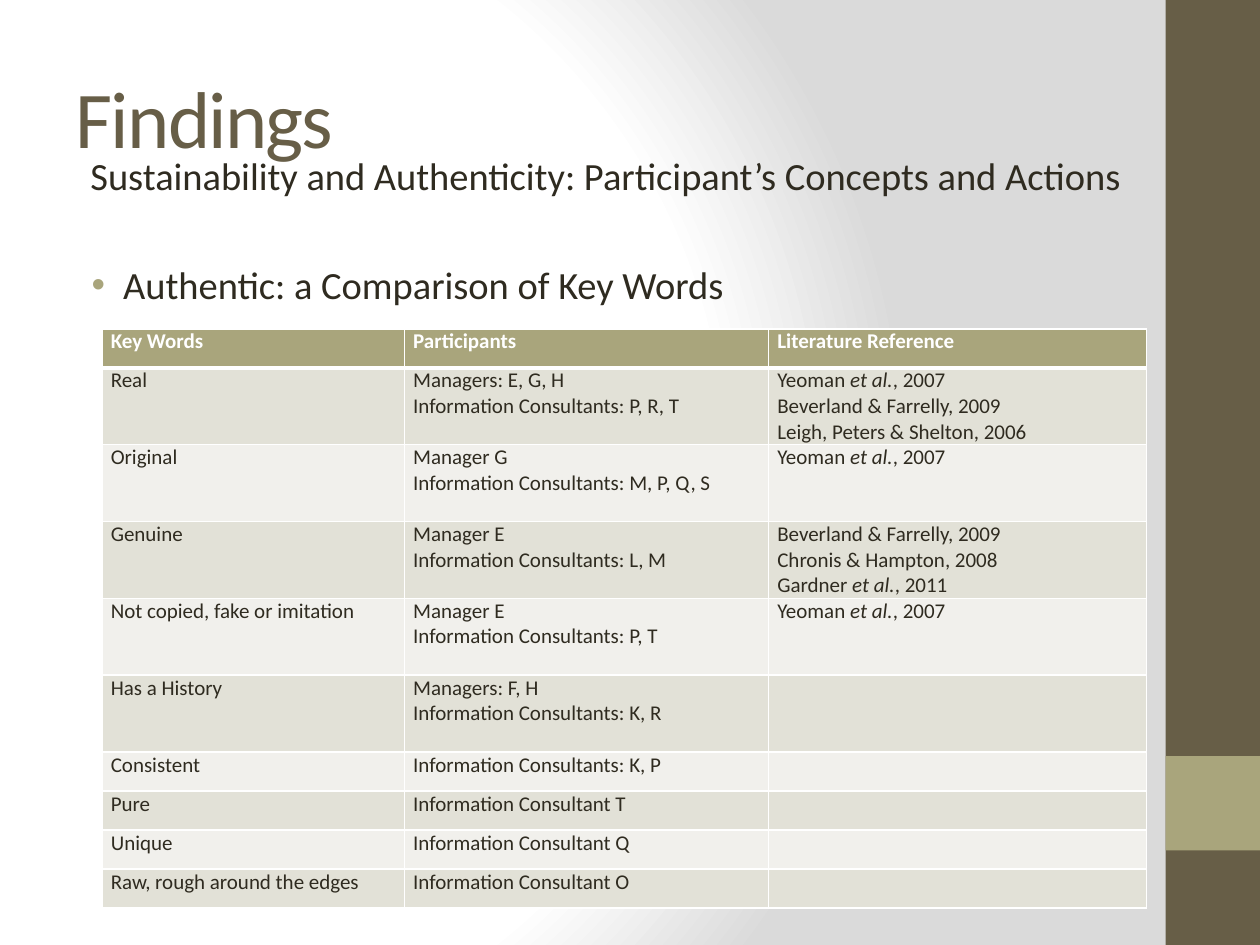
"""Build the Findings slide comparing key words for authenticity."""
from dataclasses import dataclass

import pptx
import pptx.dml.color
import pptx.enum.shapes
import pptx.enum.text
import pptx.oxml
import pptx.oxml.ns
import pptx.util

Inches = pptx.util.Inches
Pt = pptx.util.Pt
FONT = "Calibri"
COLORS = {
    "white": "FFFFFF",
    "gray": "DADADA",
    "brown": "675E47",
    "olive": "A9A57C",
    "ink": "2F2B20",
    "band_dark": "E2E1D7",
    "band_light": "F1F0EC",
}
NS = pptx.oxml.ns.nsdecls("a")


@dataclass
class Bar:
    top: float
    height: float
    color: str


@dataclass
class KeyWord:
    name: str
    participants: tuple[str, ...]
    references: tuple[str, ...] = ()


BARS = [Bar(0, 7.5, "brown"), Bar(6, 0.75, "olive")]
HEADERS = ("Key Words", "Participants", "Literature Reference")
COL_WIDTHS = (2.4, 2.89, 3)
ROW_SHORT, ROW_TALL = 0.31, 0.61
KEY_WORDS = [
    KeyWord("Real", ("Managers: E, G, H", "Information Consultants: P, R, T"),
            ("Yeoman et al., 2007", "Beverland & Farrelly, 2009", "Leigh, Peters & Shelton, 2006")),
    KeyWord("Original", ("Manager G", "Information Consultants: M, P, Q, S"), ("Yeoman et al., 2007",)),
    KeyWord("Genuine", ("Manager E", "Information Consultants: L, M"),
            ("Beverland & Farrelly, 2009", "Chronis & Hampton, 2008", "Gardner et al., 2011")),
    KeyWord("Not copied, fake or imitation", ("Manager E", "Information Consultants: P, T"),
            ("Yeoman et al., 2007",)),
    KeyWord("Has a History", ("Managers: F, H", "Information Consultants: K, R")),
    KeyWord("Consistent", ("Information Consultants: K, P",)),
    KeyWord("Pure", ("Information Consultant T",)),
    KeyWord("Unique", ("Information Consultant Q",)),
    KeyWord("Raw, rough around the edges", ("Information Consultant O",)),
]


def rgb(name: str) -> pptx.dml.color.RGBColor:
    return pptx.dml.color.RGBColor.from_string(COLORS[name])


def write(p, text: str, *, size: float, color: str = "ink", bold: bool = False,
          align=pptx.enum.text.PP_ALIGN.LEFT, before: float = 0,
          left: float = 0, indent: float = 0, bullet: str = "") -> None:
    p.alignment = align
    p.space_before = Pt(before)
    p.font.size = Pt(size)
    pPr = p._p.get_or_add_pPr()
    pPr.set("marL", str(Inches(left)))
    pPr.set("indent", str(Inches(indent)))
    if bullet:
        for xml in (f'<a:buClr {NS}><a:srgbClr val="{COLORS["olive"]}"/></a:buClr>',
                    f'<a:buFont {NS} typeface="Arial"/>',
                    f'<a:buChar {NS} char="{bullet}"/>'):
            pPr.insert_element_before(pptx.oxml.parse_xml(xml), "a:tabLst", "a:defRPr", "a:extLst")
    before_latin, latin, after_latin = text.partition("et al.")
    for part in filter(None, (before_latin, latin, after_latin)):
        r = p.add_run()
        r.text = part
        r.font.name = FONT
        r.font.size = Pt(size)
        r.font.bold = bold
        r.font.italic = part == "et al."
        r.font.color.rgb = rgb(color)


def set_background(slide) -> None:
    slide.background.fill.solid()
    solid = next(slide.element.iter(pptx.oxml.ns.qn("p:bgPr")))[0]
    stops = "".join(f'<a:gs pos="{pos * 1000}"><a:srgbClr val="{COLORS[name]}"/></a:gs>'
                    for pos, name in ((0, "white"), (75, "white"), (100, "gray")))
    gradient = pptx.oxml.parse_xml(
        f'<a:gradFill {NS} rotWithShape="1"><a:gsLst>{stops}</a:gsLst><a:path path="circle">'
        '<a:fillToRect l="20000" t="50000" r="100000" b="50000"/></a:path></a:gradFill>')
    solid.getparent().replace(solid, gradient)


def add_bar(slide, bar: Bar) -> None:
    sp = slide.shapes.add_shape(pptx.enum.shapes.MSO_SHAPE.RECTANGLE, Inches(9.25),
                                Inches(bar.top), Inches(0.75), Inches(bar.height))
    sp.shadow.inherit = False
    sp.fill.solid()
    sp.fill.fore_color.rgb = rgb(bar.color)
    sp.line.fill.background()


def add_title(slide) -> None:
    sp = slide.shapes.title
    sp.left, sp.top, sp.width, sp.height = map(Inches, (0.5, 0.3, 8.33, 1.25))
    tf = sp.text_frame
    tf.vertical_anchor = pptx.enum.text.MSO_ANCHOR.MIDDLE
    p = tf.paragraphs[0]
    write(p, "Findings", size=46, color="brown")
    p.runs[0].font._element.set("spc", "-100")


def add_body(slide) -> None:
    tf = slide.shapes.add_textbox(*map(Inches, (0.5, 1.16, 8.76, 1.4))).text_frame
    tf.word_wrap = True
    write(tf.paragraphs[0], "Sustainability and Authenticity: Participant’s Concepts and Actions",
          size=22, before=4.4, left=0.12)
    write(tf.add_paragraph(), "Authentic: a Comparison of Key Words",
          size=22, before=35.6, left=0.38, indent=-0.25, bullet="•")


def fill_cell(cell, lines: tuple[str, ...], fill: str, top: float, bottom: float, **fmt) -> None:
    cell.margin_left = cell.margin_right = Inches(0.07)
    cell.margin_top = cell.margin_bottom = 0
    cell.fill.solid()
    cell.fill.fore_color.rgb = rgb(fill)
    tcPr = cell._tc.get_or_add_tcPr()
    for i, (side, width) in enumerate(zip("LRTB", (1, 1, top, bottom))):
        tcPr.insert(i, pptx.oxml.parse_xml(
            f'<a:ln{side} {NS} w="{Pt(width)}"><a:solidFill>'
            f'<a:srgbClr val="{COLORS["white"]}"/></a:solidFill></a:ln{side}>'))
    tf = cell.text_frame
    for i, line in enumerate(lines or ("",)):
        p = tf.add_paragraph() if i else tf.paragraphs[0]
        write(p, line, size=12, align=pptx.enum.text.PP_ALIGN.JUSTIFY, **fmt)


def add_key_word_table(slide) -> None:
    heights = [ROW_SHORT] + [ROW_TALL if len(k.participants) > 1 else ROW_SHORT for k in KEY_WORDS]
    table = slide.shapes.add_table(len(heights), len(COL_WIDTHS), Inches(0.81), Inches(2.61),
                                   Inches(sum(COL_WIDTHS)), Inches(sum(heights))).table
    for col, width in zip(table.columns, COL_WIDTHS):
        col.width = Inches(width)
    for row, height in zip(table.rows, heights):
        row.height = Inches(height)
    for c, header in enumerate(HEADERS):
        fill_cell(table.cell(0, c), (header,), "olive", 1, 3, color="white", bold=True)
    for r, k in enumerate(KEY_WORDS, start=1):
        band = "band_dark" if r % 2 else "band_light"
        top = 3 if r == 1 else 1
        fill_cell(table.cell(r, 0), (k.name,), band, top, 1)
        fill_cell(table.cell(r, 1), k.participants, band, top, 1)
        fill_cell(table.cell(r, 2), k.references, band, top, 1, left=0.5, indent=-0.5)


def main() -> None:
    prs = pptx.Presentation()
    prs.slide_width, prs.slide_height = Inches(10), Inches(7.5)
    slide = prs.slides.add_slide(prs.slide_layouts[5])
    set_background(slide)
    for bar in BARS:
        add_bar(slide, bar)
    add_title(slide)
    add_body(slide)
    add_key_word_table(slide)
    prs.save("out.pptx")


if __name__ == "__main__":
    main()
